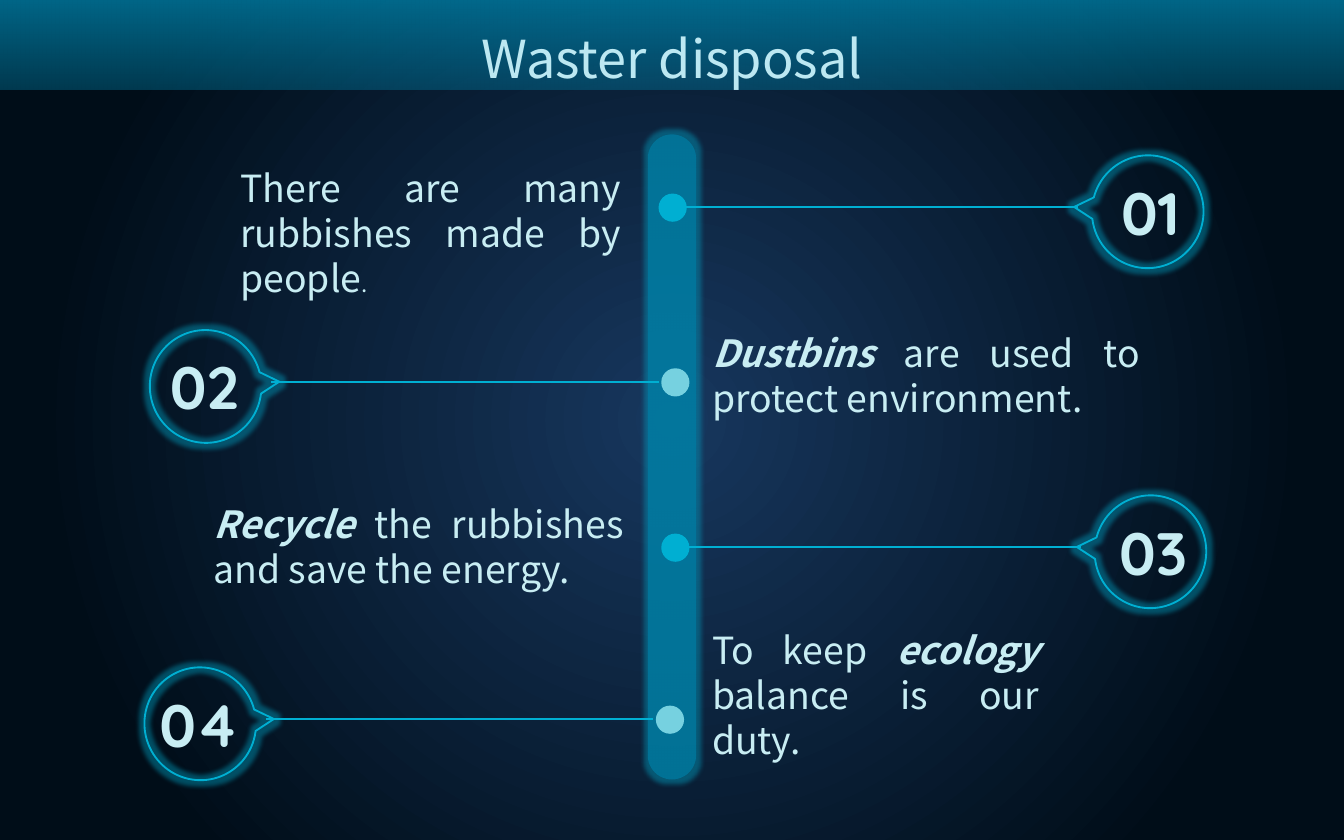
from lxml import etree
from pptx import Presentation
from pptx.dml.color import RGBColor
from pptx.enum.shapes import MSO_CONNECTOR, MSO_SHAPE
from pptx.enum.text import MSO_ANCHOR, MSO_AUTO_SIZE, PP_ALIGN
from pptx.oxml.ns import nsdecls, qn
from pptx.oxml import parse_xml
from pptx.util import Inches, Pt

RECT, ROUND = MSO_SHAPE.RECTANGLE, MSO_SHAPE.ROUNDED_RECTANGLE
OVAL, CALLOUT = MSO_SHAPE.OVAL, MSO_SHAPE.OVAL_CALLOUT
STRAIGHT = MSO_CONNECTOR.STRAIGHT
CENTER, JUSTIFY = PP_ALIGN.CENTER, PP_ALIGN.JUSTIFY
FONT, NUMBER_FONT = "Noto Sans CJK SC", "Quicksand"

COLORS = {"center": "17375E", "edge": "000D18", "teal": "007DA4",
          "cyan": "00AFD2", "pale": "76D1E0", "text": "C8EDF3", "title": "BCE8F2"}
RGB = {name: RGBColor.from_string(value) for name, value in COLORS.items()}


def write(sp, runs, font=FONT, size=20, color="text", align=JUSTIFY, spacing=1.0):
    """Fill a shape with one paragraph; each run is (text, format overrides)."""
    tf = sp.text_frame
    tf.word_wrap = True
    tf.auto_size = MSO_AUTO_SIZE.NONE
    tf.vertical_anchor = MSO_ANCHOR.TOP
    p = tf.paragraphs[0]
    p.alignment, p.line_spacing = align, spacing
    p.space_before = Pt(0)
    for text, extra in runs:
        r = p.add_run()
        r.text = text
        r.font.name = font
        r.font.size = Pt(extra.get("size", size))
        r.font.bold = extra.get("bold", False)
        r.font.italic = extra.get("italic", False)
        r.font.color.rgb = RGB[color]
        etree.SubElement(r.font._element, qn("a:ea")).set("typeface", font)


def add_glow(sp, radius=5):
    """Give a shape a soft cyan glow, with the radius in points."""
    sp._element.spPr.append(parse_xml(
        f'<a:effectLst {nsdecls("a")}><a:glow rad="{Pt(radius)}">'
        f'<a:srgbClr val="{COLORS["cyan"]}"><a:alpha val="40000"/></a:srgbClr>'
        '</a:glow></a:effectLst>'))


prs = Presentation()
prs.slide_width, prs.slide_height = Inches(10), Inches(6.25)
s = prs.slides.add_slide(prs.slide_layouts[5])

# Background: radial gradient from the centre
fill = s.background.fill
fill.gradient()
for stop, name, position in zip(fill.gradient_stops, ("center", "edge"), (0, 0.8)):
    stop.color.rgb, stop.position = RGB[name], position
lin = s._element.find(".//" + qn("a:lin"))
lin.getparent().replace(lin, parse_xml(
    f'<a:path {nsdecls("a")} path="circle">'
    '<a:fillToRect l="50000" t="50000" r="50000" b="50000"/></a:path>'))

# Header band that fades downwards
band = s.shapes.add_shape(RECT, 0, 0, prs.slide_width, Inches(0.67))
band.shadow.inherit = False
band.line.fill.background()
band.fill.gradient()
band.fill.gradient_angle = 270
for stop, position in zip(band.fill.gradient_stops, (0, 1)):
    stop.color.rgb, stop.position = RGB["teal"], position
for clr, alpha in zip(band._element.spPr.iter(qn("a:srgbClr")), (80000, 39000)):
    etree.SubElement(clr, qn("a:alpha")).set("val", str(alpha))

# Title, brought in front of the band
title = s.shapes.title
title.left, title.top = Inches(2.88), Inches(0.05)
title.width, title.height = Inches(4.24), Inches(0.63)
write(title, [("Waster disposal", {})], size=28, color="title", align=CENTER, spacing=1.2)
s.shapes._spTree.append(title._element)

# Central bar
bar = s.shapes.add_shape(ROUND, Inches(4.82), Inches(1), Inches(0.36), Inches(4.8))
bar.adjustments[0] = 0.5
bar.fill.solid()
bar.fill.fore_color.rgb = RGB["teal"]
etree.SubElement(bar._element.spPr.find(".//" + qn("a:srgbClr")),
                 qn("a:alpha")).set("val", "70000")
bar.line.fill.background()
add_glow(bar)

# Numbered branches: offsets from the dot's left edge, for each side
SIDES = {"right": {"dot": "cyan", "line": (0.19, 3.12), "callout": 3.22,
                   "number": 3.2, "rotation": 103.7},
         "left": {"dot": "pale", "line": (-0.02, -2.9), "callout": -3.81,
                  "number": -3.86, "rotation": 256.3}}
branches = [("01", "right", 4.9, 1.54), ("02", "left", 4.92, 2.84),
            ("03", "right", 4.92, 4.07), ("04", "left", 4.88, 5.35)]
for number, side_name, x, y in branches:
    side = SIDES[side_name]

    dot = s.shapes.add_shape(OVAL, Inches(x), Inches(y - 0.1), Inches(0.21), Inches(0.21))
    dot.shadow.inherit = False
    dot.fill.solid()
    dot.fill.fore_color.rgb = RGB[side["dot"]]
    dot.line.fill.background()

    start, end = side["line"]
    line = s.shapes.add_connector(STRAIGHT, Inches(x + start), Inches(y),
                                  Inches(x + end), Inches(y))
    line.line.color.rgb, line.line.width = RGB["cyan"], Pt(1)
    etree.SubElement(line._element.spPr, qn("a:effectLst"))

    callout = s.shapes.add_shape(CALLOUT, Inches(x + side["callout"]), Inches(y - 0.38),
                                 Inches(0.84), Inches(0.83))
    callout.adjustments[0], callout.adjustments[1] = -0.113, 0.652
    callout.rotation = side["rotation"]
    if side_name == "right":
        callout._element.spPr.xfrm.set("flipH", "1")
    callout.fill.background()
    callout.line.color.rgb, callout.line.width = RGB["cyan"], Pt(1)
    add_glow(callout)

    label = s.shapes.add_textbox(Inches(x + side["number"]), Inches(y - 0.18),
                                 Inches(0.92), Inches(0.53))
    write(label, [(number, {"bold": True})], font=NUMBER_FONT, size=32,
          align=CENTER, spacing=0.8)

# Statements
STRONG = {"bold": True, "italic": True}
statements = [
    (1.69, 1.18, 3.03, 1.1, [("There are many rubbishes made by people", {}),
                             (".", {"size": 12})]),
    (5.2, 2.41, 3.38, 0.77, [("Dustbins", STRONG),
                             (" are used to protect environment.", {})]),
    (1.49, 3.68, 3.25, 0.77, [("Recycle", STRONG),
                              (" the rubbishes and save the energy.", {})]),
    (5.2, 4.62, 2.63, 1.1, [("To keep ", {}), ("ecology ", STRONG),
                            ("balance is our duty.", {})]),
]
for x, y, w, h, runs in statements:
    write(s.shapes.add_textbox(Inches(x), Inches(y), Inches(w), Inches(h)), runs)

prs.save("out.pptx")
